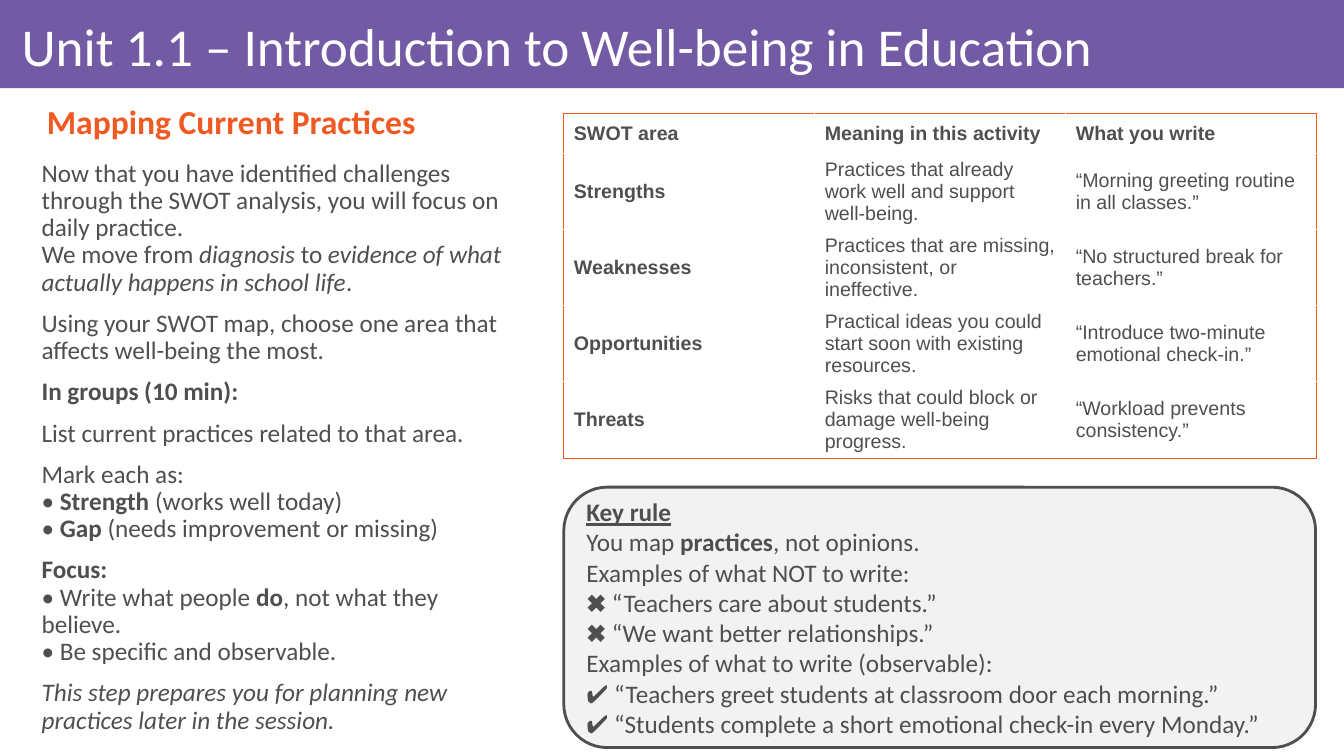
from copy import deepcopy

from lxml import etree
from pptx import Presentation
from pptx import util as u
from pptx.dml.color import RGBColor
from pptx.enum import shapes, text
from pptx.oxml import ns

PX = 9525
PURPLE = RGBColor(0x73, 0x5A, 0xA5)
ORANGE = RGBColor(0xF0, 0x5A, 0x22)
GREY = RGBColor(0x4F, 0x4F, 0x50)
PALE = RGBColor(0xF2, 0xF2, 0xF2)
WHITE = RGBColor(0xFF, 0xFF, 0xFF)

BOLD = {"bold": True}
ITALIC = {"italic": True}
KEY = {"bold": True, "underline": True}
PLAIN = {}

TITLE_FONT = {"name": "Calibri", "size": u.Pt(38), "bold": False}
HEADING_FONT = {"name": "Calibri", "size": u.Pt(24), "bold": True}
TEXT_FONT = {"name": "Calibri", "size": u.Pt(18), "bold": False}
TABLE_FONT = {"name": "Arial", "size": u.Pt(14), "bold": False}

TITLE_SPACING = {"alignment": text.PP_ALIGN.LEFT, "line_spacing": 0.9}
BODY_SPACING = {"line_spacing": 0.9, "space_before": u.Pt(10)}
HEADING_SPACING = {**BODY_SPACING, "alignment": text.PP_ALIGN.JUSTIFY}
RULE_SPACING = {"alignment": text.PP_ALIGN.LEFT}

TITLE = [[("Unit 1.1 – Introduction to Well-being in Education", PLAIN)]]
HEADING = [[("Mapping Current Practices ", PLAIN)]]
ACTIVITY = [
    [("Now that you have identified challenges through the SWOT analysis, "
      "you will focus on daily practice.\nWe move from ", PLAIN),
     ("diagnosis", ITALIC), (" to ", PLAIN),
     ("evidence of what actually happens in school life", ITALIC), (".", PLAIN)],
    [("Using your SWOT map, choose one area that affects well-being the most.", PLAIN)],
    [("In groups (10 min):", BOLD)],
    [("List current practices related to that area.", PLAIN)],
    [("Mark each as:\n• ", PLAIN), ("Strength", BOLD), (" (works well today)\n• ", PLAIN),
     ("Gap", BOLD), (" (needs improvement or missing)", PLAIN)],
    [("Focus:\n", BOLD), ("• Write what people ", PLAIN), ("do", BOLD),
     (", not what they believe.\n• Be specific and observable.", PLAIN)],
    [("This step prepares you for planning new practices later in the session.", ITALIC)],
]
KEY_RULE = [
    [("Key rule", KEY)],
    [("You map ", PLAIN), ("practices", BOLD), (", not opinions.", PLAIN)],
    [("Examples of what NOT to write:\n✖ “Teachers care about students.”\n"
      "✖ “We want better relationships.”", PLAIN)],
    [("Examples of what to write (observable):\n"
      "✔ “Teachers greet students at classroom door each morning.”\n"
      "✔ “Students complete a short emotional check-in every Monday.”", PLAIN)],
]
SWOT = [
    ("SWOT area", "Meaning in this activity", "What you write"),
    ("Strengths", "Practices that already work well and support well-being.",
     "“Morning greeting routine in all classes.”"),
    ("Weaknesses", "Practices that are missing, inconsistent, or ineffective.",
     "“No structured break for teachers.”"),
    ("Opportunities", "Practical ideas you could start soon with existing resources.",
     "“Introduce two-minute emotional check-in.”"),
    ("Threats", "Risks that could block or damage well-being progress.",
     "“Workload prevents consistency.”"),
]


def box(*lengths):
    return [u.Emu(length * PX) for length in lengths]


def apply_format(target, values):
    for key, value in values.items():
        setattr(target, key, value)


def write_paragraph(paragraph, runs, font, color):
    for words, emphasis in runs:
        for index, line in enumerate(words.split("\n")):
            if index:
                paragraph.add_line_break()
            if line:
                run = paragraph.add_run()
                run.text = line
                apply_format(run.font, {**font, **emphasis})
                run.font.color.rgb = color
    properties = paragraph.runs[0].font._element
    for line_break in paragraph._p.findall(ns.qn("a:br")):
        line_break.insert(0, deepcopy(properties))


def write_text(frame, paragraphs, font, color, spacing):
    for index, runs in enumerate(paragraphs):
        paragraph = frame.add_paragraph() if index else frame.paragraphs[0]
        apply_format(paragraph, spacing)
        write_paragraph(paragraph, runs, font, color)


def fill_placeholder(holder, place, paragraphs, font, color, spacing, frame_format, indent=(0, 0)):
    apply_format(holder, dict(zip(("left", "top", "width", "height"), box(*place))))
    frame = holder.text_frame
    apply_format(frame, {"word_wrap": True, "auto_size": text.MSO_AUTO_SIZE.NONE, **frame_format})
    write_text(frame, paragraphs, font, color, spacing)
    for paragraph in frame.paragraphs:
        properties = paragraph._p.get_or_add_pPr()
        properties.set("marL", str(indent[0] * PX))
        properties.set("indent", str(indent[1] * PX))
        etree.SubElement(properties, ns.qn("a:buNone"))


def add_panel(slide, kind, place, fill):
    panel = slide.shapes.add_shape(kind, *box(*place))
    panel.shadow.inherit = False
    panel.fill.solid()
    panel.fill.fore_color.rgb = fill
    panel.line.fill.background()
    return panel


def add_key_rule(slide, place):
    panel = add_panel(slide, shapes.MSO_SHAPE.ROUNDED_RECTANGLE, place, PALE)
    panel.line.color.rgb = GREY
    panel.line.width = u.Pt(2)
    frame = panel.text_frame
    apply_format(frame, {"word_wrap": True, "vertical_anchor": text.MSO_ANCHOR.MIDDLE})
    write_text(frame, KEY_RULE, TEXT_FONT, GREY, RULE_SPACING)


def add_border(cell, side):
    border = etree.SubElement(cell._tc.get_or_add_tcPr(), ns.qn(f"a:ln{side}"), w=str(u.Pt(0.75)))
    fill = etree.SubElement(border, ns.qn("a:solidFill"))
    etree.SubElement(fill, ns.qn("a:srgbClr"), val=str(ORANGE))


def add_swot_table(slide, left, top, column_width, header_height, row_height):
    rows, columns = len(SWOT), len(SWOT[0])
    height = header_height + row_height * (rows - 1)
    place = box(left, top, column_width * columns, height)
    table = slide.shapes.add_table(rows, columns, *place).table
    apply_format(table, {"first_row": False, "horz_banding": False})
    for column in table.columns:
        column.width = u.Emu(column_width * PX)
    for r, entries in enumerate(SWOT):
        table.rows[r].height = u.Emu((row_height if r else header_height) * PX)
        for c, entry in enumerate(entries):
            cell = table.cell(r, c)
            cell.vertical_anchor = text.MSO_ANCHOR.MIDDLE
            outer = {"L": c == 0, "R": c == columns - 1, "T": r == 0, "B": r == rows - 1}
            for side, is_outer in outer.items():
                if is_outer:
                    add_border(cell, side)
            cell.fill.background()
            emphasis = BOLD if r == 0 or c == 0 else PLAIN
            write_paragraph(cell.text_frame.paragraphs[0], [(entry, emphasis)], TABLE_FONT, GREY)


def main():
    deck = Presentation()
    deck.slide_width, deck.slide_height = box(1280, 720)
    slide = deck.slides.add_slide(deck.slide_layouts[3])
    title, heading, activity = slide.placeholders

    band = add_panel(slide, shapes.MSO_SHAPE.RECTANGLE, (0, 0, 1280, 84), PURPLE)
    slide.shapes._spTree.insert(2, band._element)

    middle = {"vertical_anchor": text.MSO_ANCHOR.MIDDLE}
    top = {"vertical_anchor": text.MSO_ANCHOR.TOP}
    title_margins = {"margin_right": u.Emu(6 * PX), "margin_top": u.Emu(6 * PX),
                     "margin_bottom": u.Emu(6 * PX)}
    fill_placeholder(title, (11, 9, 1254, 75), TITLE, TITLE_FONT, WHITE, TITLE_SPACING,
                     {**middle, **title_margins})
    fill_placeholder(heading, (11, 89, 1254, 58), HEADING, HEADING_FONT, ORANGE,
                     HEADING_SPACING, middle, indent=(48, -24))
    fill_placeholder(activity, (11, 148, 483, 555), ACTIVITY, TEXT_FONT, GREY,
                     BODY_SPACING, top, indent=(19, 0))
    add_key_rule(slide, (537, 464, 716, 248))
    add_swot_table(slide, 537, 108, 239, 38, 71)
    deck.save("out.pptx")


if __name__ == "__main__":
    main()
